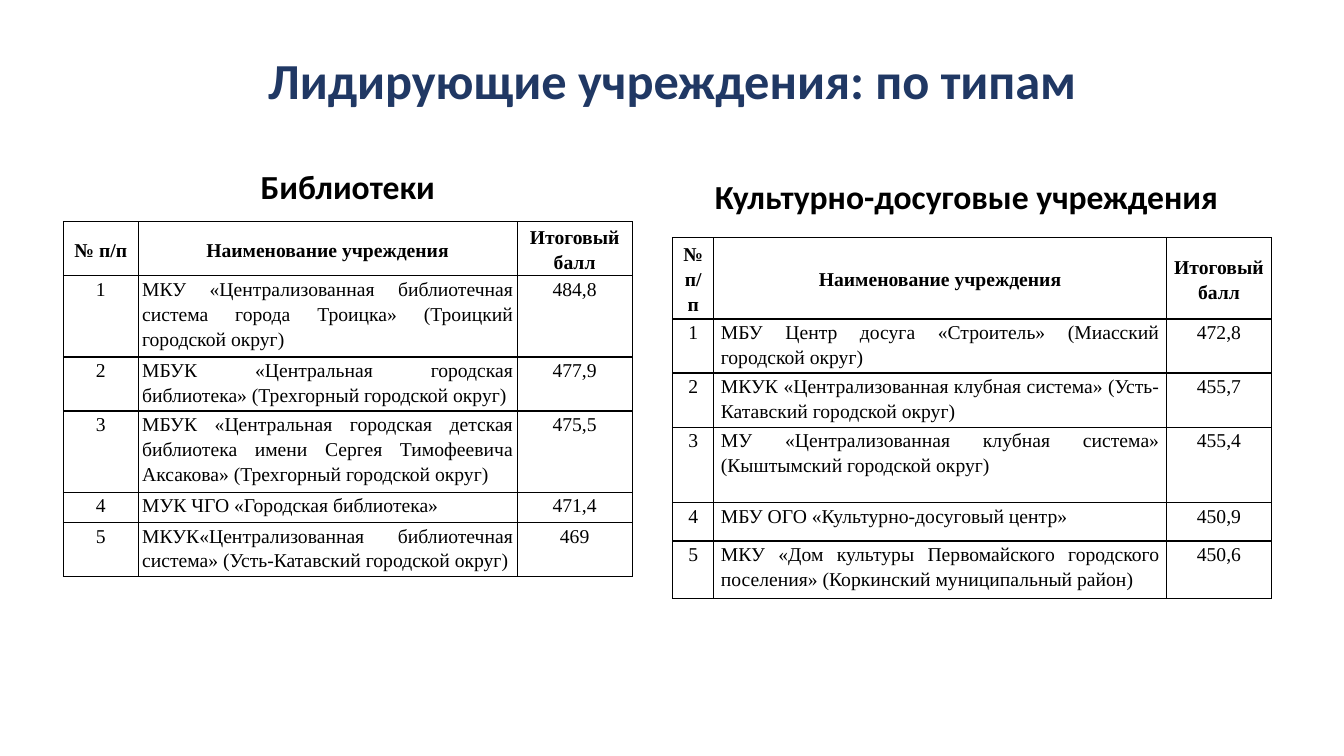
from lxml.etree import SubElement
from pptx import Presentation
from pptx.dml.color import RGBColor
from pptx.enum.text import MSO_ANCHOR, PP_ALIGN
from pptx.oxml.ns import qn
from pptx.util import Inches, Pt

NAVY = RGBColor(0x20, 0x38, 0x64)
BLACK = RGBColor(0, 0, 0)
HEADS = ("№ п/п", "Наименование учреждения", "Итоговый балл")

LIBRARIES = (
    ("МКУ «Централизованная библиотечная система города Троицка» (Троицкий городской округ)", "484,8"),
    ("МБУК «Центральная городская библиотека» (Трехгорный городской округ)", "477,9"),
    ("МБУК «Центральная городская детская библиотека имени Сергея Тимофеевича Аксакова» "
     "(Трехгорный городской округ)", "475,5"),
    ("МУК ЧГО «Городская библиотека»", "471,4"),
    ("МКУК«Централизованная библиотечная система» (Усть-Катавский городской округ)", "469"),
)
CLUBS = (
    ("МБУ Центр досуга «Строитель» (Миасский городской округ)", "472,8"),
    ("МКУК «Централизованная клубная система» (Усть-Катавский городской округ)", "455,7"),
    ("МУ «Централизованная клубная система» (Кыштымский городской округ)", "455,4"),
    ("МБУ ОГО «Культурно-досуговый центр»", "450,9"),
    ("МКУ «Дом культуры Первомайского городского поселения» (Коркинский муниципальный район)", "450,6"),
)


def apply(target, values):
    for name, value in values.items():
        setattr(target, name, value)


class Board:
    head_font = {"name": "Calibri", "bold": True}
    cell_font = {"name": "Times New Roman", "size": Pt(14)}
    head_para = {"alignment": PP_ALIGN.CENTER, "line_spacing": 0.9}
    cell_para = {"line_spacing": 1.15}
    plain = {"first_row": False, "horz_banding": False}

    def __init__(self, slide):
        self.slide = slide

    def text(self, frame, words, para, font, color):
        line = frame.paragraphs[0]
        apply(line, para)
        run = line.add_run()
        run.text = words
        apply(run.font, font)
        run.font.color.rgb = color

    def heading(self, words, box, size, color, anchor, before=0):
        frame = self.slide.shapes.add_textbox(*map(Inches, box)).text_frame
        apply(frame, {"word_wrap": True, "vertical_anchor": anchor})
        self.text(frame, words, self.head_para | {"space_before": Pt(before)},
                  self.head_font | {"size": Pt(size)}, color)

    def border(self, cell):
        props = cell._tc.get_or_add_tcPr()
        for side in ("a:lnL", "a:lnR", "a:lnT", "a:lnB"):
            line = SubElement(props, qn(side), w=str(Pt(1)))
            fill = SubElement(line, qn("a:solidFill"))
            SubElement(fill, qn("a:srgbClr"), val=str(BLACK))

    def cell(self, cell, words, header, align, inset):
        self.border(cell)
        cell.fill.background()
        apply(cell, {
            "margin_left": Inches(inset), "margin_right": Inches(inset),
            "margin_top": 0, "margin_bottom": 0,
            "vertical_anchor": MSO_ANCHOR.MIDDLE if header else MSO_ANCHOR.TOP,
        })
        self.text(cell.text_frame, words, self.cell_para | {"alignment": align},
                  self.cell_font | {"bold": header}, BLACK)

    def table(self, entries, left, top, widths, heights, inset):
        rows = [HEADS] + [(str(rank), *entry) for rank, entry in enumerate(entries, 1)]
        box = (left, top, sum(widths), sum(heights))
        table = self.slide.shapes.add_table(len(rows), len(HEADS), *map(Inches, box)).table
        apply(table, self.plain)
        for column, width in zip(table.columns, widths):
            column.width = Inches(width)
        for row, height in zip(table.rows, heights):
            row.height = Inches(height)
        for r, row in enumerate(rows):
            for c, words in enumerate(row):
                align = PP_ALIGN.JUSTIFY if r and c == 1 else PP_ALIGN.CENTER
                self.cell(table.cell(r, c), words, r == 0, align, inset)


def main():
    deck = Presentation()
    apply(deck, {"slide_width": Inches(13.33), "slide_height": Inches(7.5)})
    board = Board(deck.slides.add_slide(deck.slide_layouts[6]))
    board.heading("Лидирующие учреждения: по типам", (0.92, 0.26, 11.5, 1.13),
                  36, NAVY, MSO_ANCHOR.MIDDLE)
    board.heading("Библиотеки", (0.63, 1.47, 5.64, 0.63), 24, BLACK, MSO_ANCHOR.BOTTOM, 10)
    board.heading("Культурно-досуговые учреждения", (6.75, 1.45, 5.67, 0.75),
                  24, BLACK, MSO_ANCHOR.BOTTOM, 10)
    board.table(LIBRARIES, 0.63, 2.2, (0.74, 3.76, 1.14), (0.3,) * 6, 0.04)
    board.table(CLUBS, 6.67, 2.36, (0.41, 4.49, 1.04),
                (0.79, 0.52, 0.52, 0.75, 0.38, 0.57), 0.07)
    deck.save("out.pptx")


if __name__ == "__main__":
    main()
